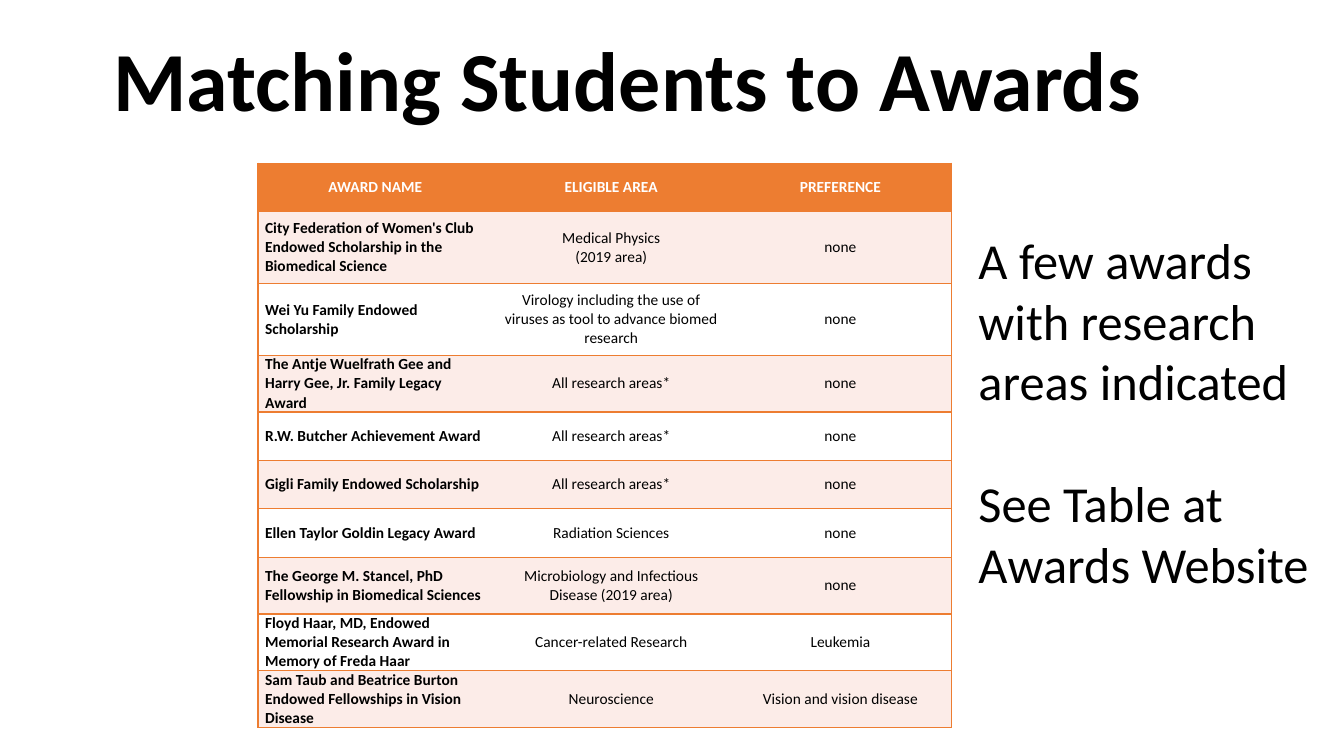
"""Build the slide that matches students to awards by research area."""
from lxml.etree import SubElement
from pptx import Presentation
from pptx.dml.color import RGBColor
from pptx.enum.text import MSO_ANCHOR as Anchor, PP_ALIGN as Align
from pptx.oxml.ns import qn
from pptx.util import Cm, Pt

BLACK = RGBColor(0x00, 0x00, 0x00)
WHITE = RGBColor(0xFF, 0xFF, 0xFF)
ORANGE = RGBColor(0xED, 0x7D, 0x31)
BLUSH = RGBColor(0xFC, 0xEC, 0xE8)

AWARDS = [
    ("AWARD NAME", "ELIGIBLE AREA", "PREFERENCE"),
    ("City Federation of Women's Club Endowed Scholarship in the Biomedical Science",
     "Medical Physics\n(2019 area)", "none"),
    ("Wei Yu Family Endowed Scholarship",
     "Virology including the use of viruses as tool to advance biomed research", "none"),
    ("The Antje Wuelfrath Gee and Harry Gee, Jr. Family Legacy Award",
     "All research areas*", "none"),
    ("R.W. Butcher Achievement Award", "All research areas*", "none"),
    ("Gigli Family Endowed Scholarship", "All research areas*", "none"),
    ("Ellen Taylor Goldin Legacy Award", "Radiation Sciences", "none"),
    ("The George M. Stancel, PhD Fellowship in Biomedical Sciences",
     "Microbiology and Infectious Disease (2019 area)", "none"),
    ("Floyd Haar, MD, Endowed Memorial Research Award in Memory of Freda Haar",
     "Cancer-related Research", "Leukemia"),
    ("Sam Taub and Beatrice Burton Endowed Fellowships in Vision Disease",
     "Neuroscience", "Vision and vision disease"),
]
COLUMN_WIDTHS = [5.92, 5.97, 5.58]
ROW_HEIGHTS = [1.22, 1.81, 1.81, 1.43, 1.22, 1.22, 1.22, 1.43, 1.43, 1.43]
CELL_FORMAT = {
    "vertical_anchor": Anchor.MIDDLE,
    "margin_left": Cm(0.18),
    "margin_right": Cm(0.18),
    "margin_top": Cm(0),
    "margin_bottom": Cm(0),
}


def write(frame, text, size, color, bold=False, align=Align.LEFT):
    frame.text = text
    font_format = {"name": "Calibri", "size": Pt(size), "bold": bold}
    for paragraph in frame.paragraphs:
        paragraph.alignment = align
        for run in paragraph.runs:
            run.font.color.rgb = color
            for key, value in font_format.items():
                setattr(run.font, key, value)


def draw_borders(cell, visible_sides):
    properties = cell._tc.get_or_add_tcPr()
    for side in "LRTB":
        line = SubElement(properties, qn(f"a:ln{side}"), w=str(Pt(1)))
        if side in visible_sides:
            fill = SubElement(line, qn("a:solidFill"))
            SubElement(fill, qn("a:srgbClr"), val=str(ORANGE))
        else:
            SubElement(line, qn("a:noFill"))


deck = Presentation()
deck.slide_width, deck.slide_height = Cm(33.87), Cm(19.05)
slide = deck.slides.add_slide(deck.slide_layouts[6])

title = slide.shapes.add_textbox(Cm(1.47), Cm(0.71), Cm(28.68), Cm(2.69)).text_frame
title.word_wrap = True
title.vertical_anchor = Anchor.BOTTOM
write(title, "Matching Students to Awards", 60, BLACK, True, Align.CENTER)
title.paragraphs[0].line_spacing = 0.9

awards = slide.shapes.add_table(
    len(AWARDS), len(COLUMN_WIDTHS), Cm(6.5), Cm(4.11),
    Cm(sum(COLUMN_WIDTHS)), Cm(sum(ROW_HEIGHTS))).table
for column, width in zip(awards.columns, COLUMN_WIDTHS):
    column.width = Cm(width)
for row, height in zip(awards.rows, ROW_HEIGHTS):
    row.height = Cm(height)

for r, award in enumerate(AWARDS):
    is_header = r == 0
    band = ORANGE if is_header else BLUSH if r % 2 else WHITE
    for c, text in enumerate(award):
        is_name = c == 0
        cell = awards.cell(r, c)
        for key, value in CELL_FORMAT.items():
            setattr(cell, key, value)
        draw_borders(cell, ("LTB", "TB", "RTB")[c])
        cell.fill.solid()
        cell.fill.fore_color.rgb = band
        write(cell.text_frame, text, 11, WHITE if is_header else BLACK,
              is_header or is_name,
              Align.LEFT if is_name and not is_header else Align.CENTER)

remark = slide.shapes.add_textbox(Cm(24.41), Cm(5.66), Cm(8.92), Cm(9.5)).text_frame
remark.word_wrap = False
write(remark, "A few awards\nwith research\nareas indicated\nSee Table at\nAwards Website", 36, BLACK)
remark.paragraphs[3].space_before = Pt(44)

deck.save("out.pptx")
